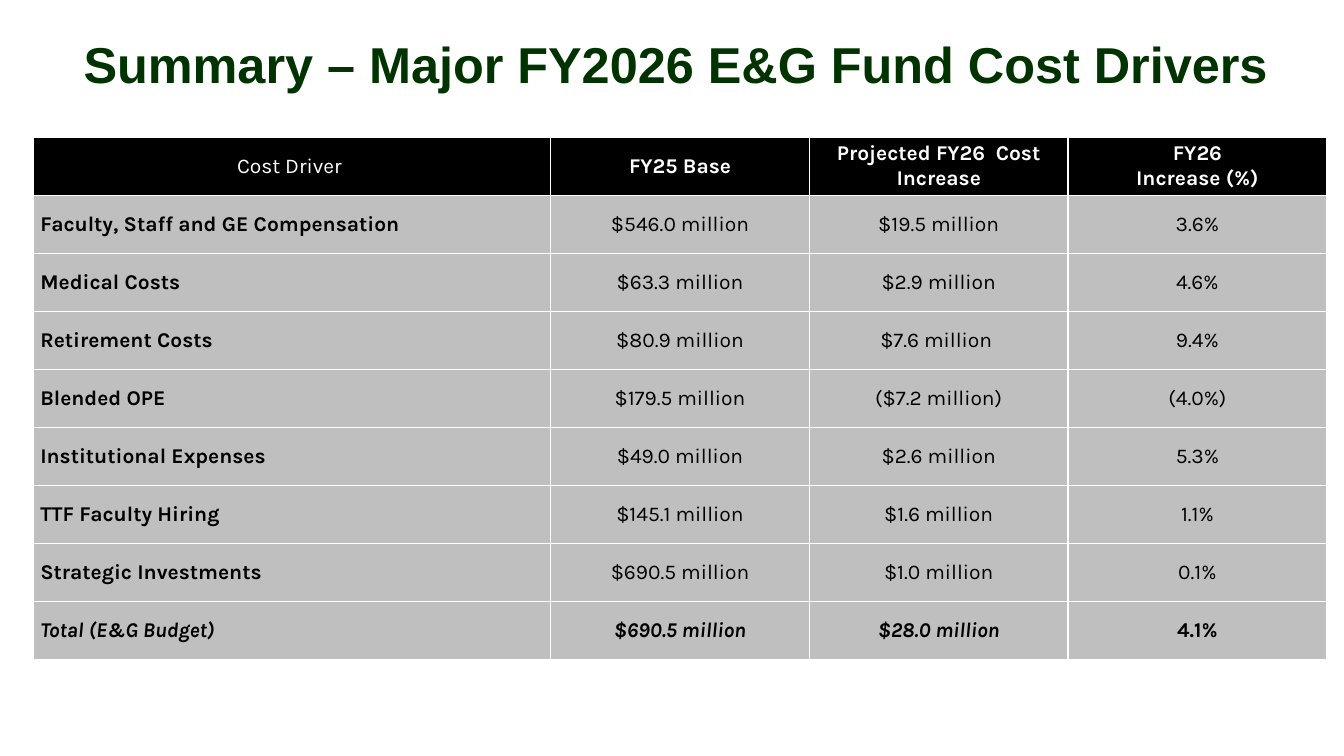
from lxml import etree
from pptx import Presentation, util as u
from pptx.dml.color import RGBColor
from pptx.enum import text
from pptx.oxml import ns

THEME = {
    "title": {"name": "Arial", "size": u.Pt(36), "bold": True, "color": "003300"},
    "header": {"name": "Karla", "size": u.Pt(15), "color": "FFFFFF"},
    "body": {"name": "Karla", "size": u.Pt(15), "color": "000000"},
    "header_fill": "000000",
    "body_fill": "BFBFBF",
    "border": "FFFFFF",
}
MARGINS = {"margin_left": u.Inches(0.07), "margin_right": u.Inches(0.07),
           "margin_top": u.Inches(0.04), "margin_bottom": u.Inches(0.04)}

COST_DRIVERS = [
    ("Cost Driver ", "FY25 Base", "Projected FY26  Cost Increase", "FY26\nIncrease (%)"),
    ("Faculty, Staff and GE Compensation", "$546.0 million", "$19.5 million", "3.6%"),
    ("Medical Costs", "$63.3 million", "$2.9 million", "4.6%"),
    ("Retirement Costs", "$80.9 million", "$7.6 million ", "9.4%"),
    ("Blended OPE", "$179.5 million", "($7.2 million)", "(4.0%)"),
    ("Institutional Expenses", "$49.0 million", "$2.6 million", "5.3%"),
    ("TTF Faculty Hiring", "$145.1 million", "$1.6 million", "1.1%"),
    ("Strategic Investments", "$690.5 million", "$1.0 million", "0.1%"),
    ("Total (E&G Budget)", "$690.5 million", "$28.0 million", "4.1%"),
]
COLUMN_SHARES = (2, 1, 1, 1)
LEFT, TABLE_TOP, TABLE_WIDTH, TABLE_HEIGHT = map(u.Inches, (0.33, 1.36, 12.83, 5.19))


def write_text(frame, content, alignment, style):
    """Fill a text frame, one paragraph per line, with the font values of style."""
    frame.text = content
    for paragraph in frame.paragraphs:
        paragraph.alignment = alignment
        for run in paragraph.runs:
            for attribute, value in style.items():
                if attribute == "color":
                    run.font.color.rgb = RGBColor.from_string(value)
                else:
                    setattr(run.font, attribute, value)


def add_borders(cell):
    properties = cell._tc.get_or_add_tcPr()
    for position, side in enumerate(("lnL", "lnR", "lnT", "lnB")):
        line = etree.Element(ns.qn(f"a:{side}"), w=str(u.Pt(1)))
        fill = etree.SubElement(line, ns.qn("a:solidFill"))
        etree.SubElement(fill, ns.qn("a:srgbClr"), val=THEME["border"])
        properties.insert(position, line)


presentation = Presentation()
presentation.slide_width, presentation.slide_height = u.Inches(13.33), u.Inches(7.5)
slide = presentation.slides.add_slide(presentation.slide_layouts[6])

table = slide.shapes.add_table(len(COST_DRIVERS), len(COLUMN_SHARES),
                               LEFT, TABLE_TOP, TABLE_WIDTH, TABLE_HEIGHT).table
for column, share in zip(table.columns, COLUMN_SHARES):
    column.width = TABLE_WIDTH * share // sum(COLUMN_SHARES)

last_row = len(COST_DRIVERS) - 1
for row, values in enumerate(COST_DRIVERS):
    for column, value in enumerate(values):
        cell = table.cell(row, column)
        kind = "body" if row else "header"
        is_label = column == 0
        bold = row == last_row or is_label == (row > 0)
        italic = row == last_row and column < 3
        alignment = text.PP_ALIGN.LEFT if is_label and row else text.PP_ALIGN.CENTER
        write_text(cell.text_frame, value, alignment,
                   {**THEME[kind], "bold": bold, "italic": italic})
        cell.vertical_anchor = text.MSO_ANCHOR.MIDDLE
        for attribute, margin in MARGINS.items():
            setattr(cell, attribute, margin)
        cell.fill.solid()
        cell.fill.fore_color.rgb = RGBColor.from_string(THEME[f"{kind}_fill"])
        add_borders(cell)

title = slide.shapes.add_textbox(LEFT, u.Inches(0.17), u.Inches(12.75), u.Inches(0.91))
title.text_frame.word_wrap = True
title.text_frame.vertical_anchor = text.MSO_ANCHOR.MIDDLE
write_text(title.text_frame, "Summary – Major FY2026 E&G Fund Cost Drivers",
           text.PP_ALIGN.CENTER, THEME["title"])

presentation.save("out.pptx")
